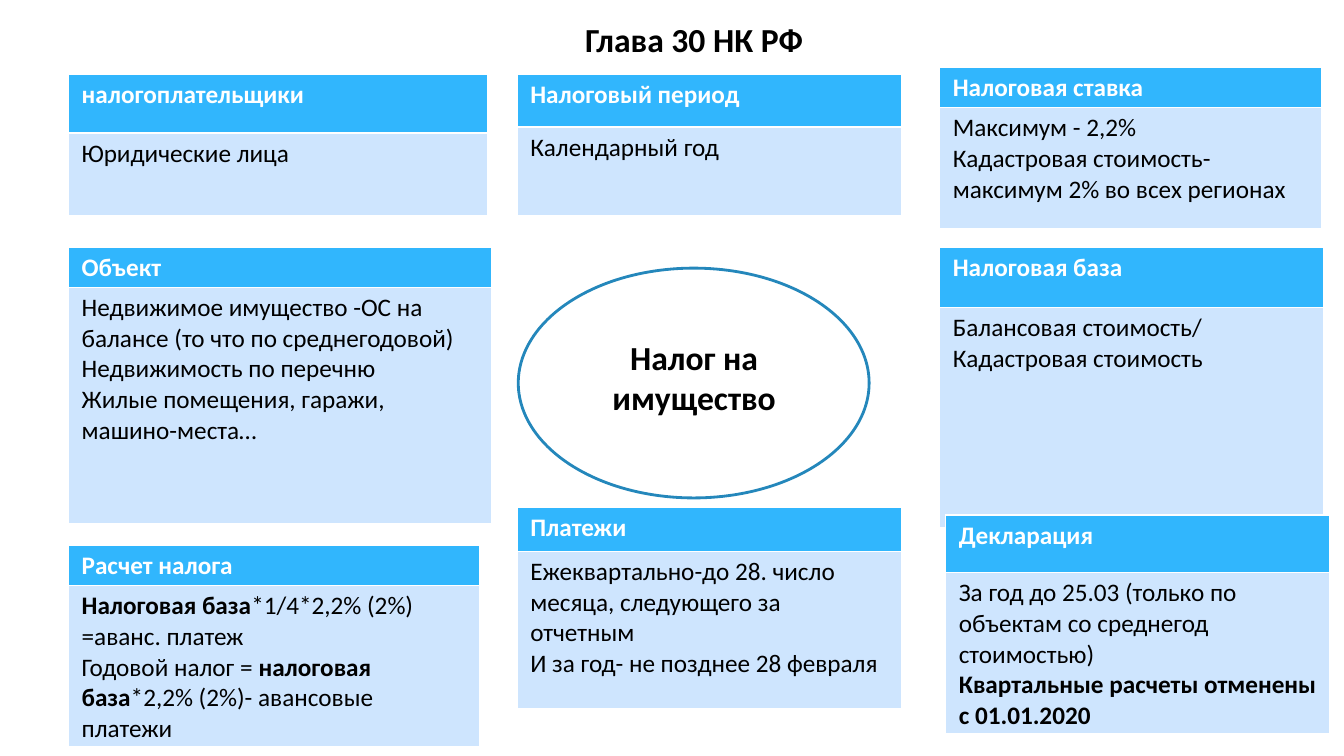
from dataclasses import dataclass

from pptx import Presentation
from pptx.dml.color import RGBColor
from pptx.enum.shapes import MSO_SHAPE
from pptx.enum.text import MSO_ANCHOR, MSO_AUTO_SIZE, PP_ALIGN
from pptx.util import Inches, Pt


@dataclass(frozen=True)
class Theme:
    """Colours, font and type sizes of the slide."""
    font: str = "Calibri"
    heading_size: int = 24
    card_size: int = 18
    ink: str = "000000"
    paper: str = "FFFFFF"
    header: str = "31B6FD"
    body: str = "CEE5FE"
    outline: str = "2487BB"


class TaxPage:
    """Draws the elements of one slide in a shared style."""

    def __init__(self, page, theme):
        """Keep the slide and its theme."""
        self.page = page
        self.theme = theme

    def set_text(self, frame, lines, size, color, bold=False, align=PP_ALIGN.LEFT):
        """Fill a text frame; text between bars turns bold."""
        frame.word_wrap = True
        for index, line in enumerate(lines):
            para = frame.add_paragraph() if index else frame.paragraphs[0]
            para.alignment = align
            para.font.name = self.theme.font
            para.font.size = Pt(size)
            para.font.bold = bold
            para.font.color.rgb = RGBColor.from_string(color)
            for part, text in enumerate(line.split("|")):
                if text:
                    span = para.add_run()
                    span.text = text
                    if part % 2:
                        span.font.bold = True

    def heading(self, frame, lines):
        """Set large centred bold text."""
        self.set_text(frame, lines, self.theme.heading_size, self.theme.ink,
                      True, PP_ALIGN.CENTER)

    def title(self, text, left, top, width, height):
        """Place and fill the title placeholder."""
        box = self.page.shapes.title
        box.left, box.top, box.width, box.height = map(Inches, (left, top, width, height))
        box.text_frame.auto_size = MSO_AUTO_SIZE.NONE
        box.text_frame.vertical_anchor = MSO_ANCHOR.TOP
        self.heading(box.text_frame, [text])

    def ellipse(self, left, top, width, height):
        """Draw the outlined central ellipse."""
        shape = self.page.shapes.add_shape(
            MSO_SHAPE.OVAL, *map(Inches, (left, top, width, height)))
        shape.shadow.inherit = False
        shape.fill.solid()
        shape.fill.fore_color.rgb = RGBColor.from_string(self.theme.paper)
        shape.line.color.rgb = RGBColor.from_string(self.theme.outline)
        shape.line.width = Pt(2)

    def label(self, lines, left, top, width, height):
        """Add a text box with heading text."""
        box = self.page.shapes.add_textbox(*map(Inches, (left, top, width, height)))
        self.heading(box.text_frame, lines)

    def card(self, heading, lines, left, top, width, header_height, body_height):
        """Add a two-row table with a header and a body."""
        heights = (header_height, body_height)
        table = self.page.shapes.add_table(
            2, 1, *map(Inches, (left, top, width, sum(heights)))).table
        table.horz_banding = False
        rows = (([heading], self.theme.header, self.theme.paper, True),
                (lines, self.theme.body, self.theme.ink, False))
        for index, (text, fill, color, bold) in enumerate(rows):
            table.rows[index].height = Inches(heights[index])
            cell = table.cell(index, 0)
            cell.margin_left = cell.margin_right = Inches(0.13)
            cell.margin_top = cell.margin_bottom = Inches(0.05)
            cell.fill.solid()
            cell.fill.fore_color.rgb = RGBColor.from_string(fill)
            self.set_text(cell.text_frame, text, self.theme.card_size, color, bold)


LEFT, MIDDLE, RIGHT = 0.68, 5.13, 9.32
CARDS = [
    ("налогоплательщики", ["Юридические лица"], LEFT, 0.74, 4.16, 0.58, 0.82),
    ("Налоговая ставка",
     ["Максимум - 2,2%", "Кадастровая стоимость- максимум 2% во всех регионах"],
     RIGHT, 0.67, 3.79, 0.37, 1.2),
    ("Налоговый период", ["Календарный год"], MIDDLE, 0.74, 3.81, 0.52, 0.88),
    ("Объект",
     ["Недвижимое имущество -ОС на балансе (то что по среднегодовой)",
      "Недвижимость по перечню",
      "Жилые помещения, гаражи, машино-места…"],
     LEFT, 2.45, 4.2, 0.37, 2.34),
    ("Налоговая база", ["Балансовая стоимость/", "Кадастровая стоимость"],
     RIGHT, 2.45, 3.81, 0.6, 2.18),
    ("Декларация",
     ["За год до 25.03 (только по объектам со среднегод стоимостью)",
      "|Квартальные расчеты отменены с 01.01.2020|"],
     9.38, 5.11, 3.81, 0.57, 1.43),
    ("Платежи",
     ["Ежеквартально-до 28. число месяца, следующего за отчетным",
      "И за год- не позднее 28 февраля"],
     MIDDLE, 5.03, 3.81, 0.44, 1.56),
    ("Расчет налога",
     ["|Налоговая база|*1/4*2,2% (2%) =аванс. платеж",
      "Годовой налог = |налоговая база|*2,2% (2%)- авансовые платежи"],
     LEFT, 5.41, 4.08, 0.2, 0.2),
]


def main():
    """Build and save the deck."""
    deck = Presentation()
    deck.slide_width, deck.slide_height = Inches(13.33), Inches(7.5)
    page = TaxPage(deck.slides.add_slide(deck.slide_layouts[5]), Theme())
    page.title("Глава 30 НК РФ", 3, 0.14, 7.77, 0.5)
    page.ellipse(5.14, 2.66, 3.48, 2.28)
    page.label(["Налог на", "имущество"], 5.56, 3.29, 2.65, 0.91)
    for card in CARDS:
        page.card(*card)
    deck.save("out.pptx")


if __name__ == "__main__":
    main()
